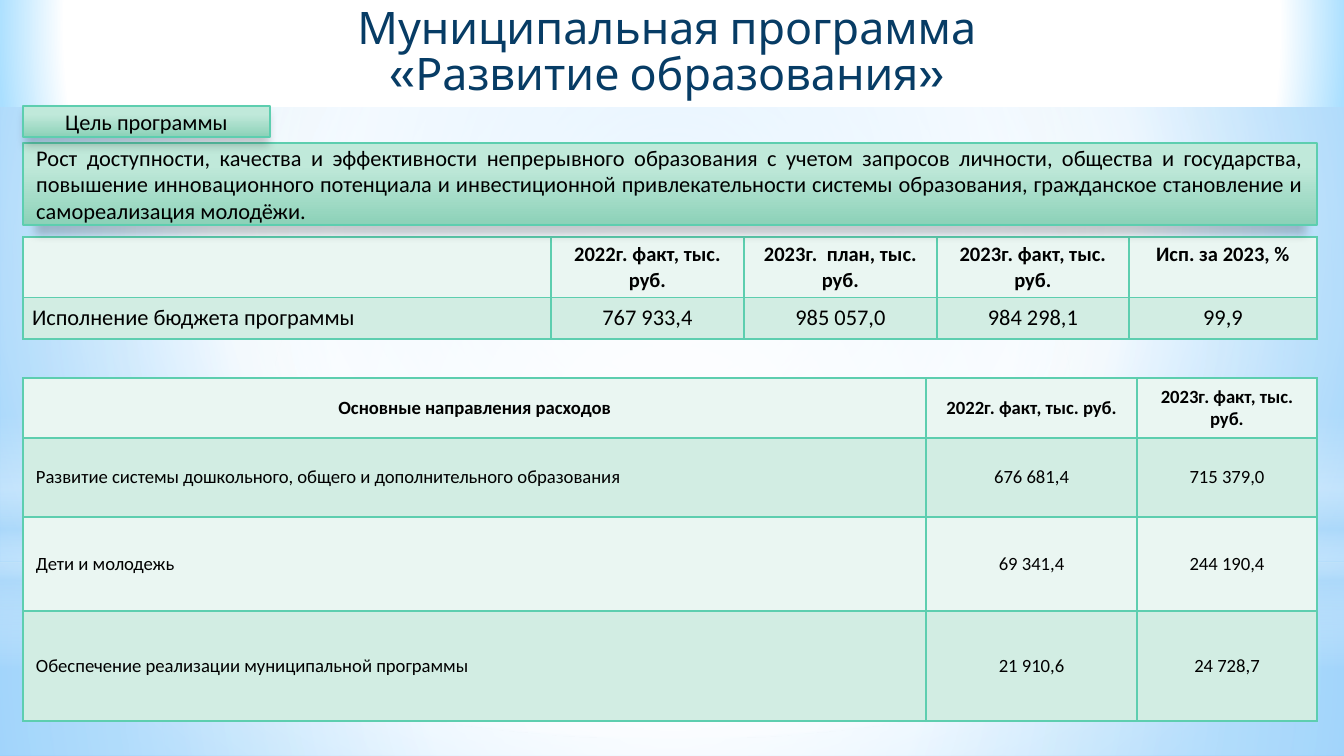
from pptx import Presentation
from pptx.dml.color import RGBColor
from pptx.enum.shapes import MSO_SHAPE
from pptx.enum.text import MSO_ANCHOR, MSO_AUTO_SIZE, PP_ALIGN
from pptx.oxml import parse_xml
from pptx.oxml.ns import qn
from pptx.util import Pt

RECT, OVAL = MSO_SHAPE.RECTANGLE, MSO_SHAPE.OVAL
MID, TOP = MSO_ANCHOR.MIDDLE, MSO_ANCHOR.TOP
LEFT, MIDST, JUST = PP_ALIGN.LEFT, PP_ALIGN.CENTER, PP_ALIGN.JUSTIFY
PX = 914400 / 134.4
NS = 'xmlns:a="http://schemas.openxmlformats.org/drawingml/2006/main"'
HEX = {"white": "FFFFFF", "sky": "B4DCFA", "pale": "AADFFF", "blue": "9ED5FF",
       "deep": "5BB9FF", "navy": "073C65", "black": "000000", "edge": "5DCEAF",
       "mint": "C0E9DA", "green": "8CD1B8", "light": "EAF6F2", "dim": "D2EDE3"}

# Content
TITLE = "Муниципальная программа \v«Развитие образования» "
GOAL = "Цель программы"
AIM = ("Рост доступности, качества и эффективности непрерывного образования "
       "с учетом запросов личности, общества и государства, повышение "
       "инновационного потенциала и инвестиционной привлекательности системы "
       "образования, гражданское становление и самореализация молодёжи.")
BUDGET = [
    ("", "2022г. факт, тыс. руб.", "2023г.  план, тыс. руб.",
     "2023г. факт, тыс. руб.", "Исп. за 2023, %"),
    ("Исполнение бюджета программы", "767 933,4", "985 057,0", "984 298,1", "99,9"),
]
COSTS = [
    ("Основные направления расходов", "2022г. факт, тыс. руб.", "2023г. факт, тыс. руб."),
    ("Развитие системы дошкольного, общего и дополнительного образования",
     "676 681,4", "715 379,0"),
    ("Дети и молодежь", "69 341,4", "244 190,4"),
    ("Обеспечение реализации муниципальной программы", "21 910,6", "24 728,7"),
]

# Gradients: stops as (position, colour, opacity), then centre (l, t, r, b) or angle
MID_RECT, HIGH_RECT = (50, 50, 50, 50), (20, 10, 20, 60)
BACK = [(0, "blue", 75), (60, "white", 100), (100, "deep", 100)]
HEAD = [(90, "white", 100), (100, "pale", 100)]
PANEL = [(28, "mint", 100), (100, "green", 100)]
BANDS = [
    (RECT, (0, 563, 1344, 193), MID_RECT,
     [(0, "white", 91), (37, "white", 76), (100, "sky", 79)]),
    (RECT, (0, 0, 1344, 563), MID_RECT,
     [(0, "white", 89), (48, "white", 62), (100, "sky", 79)]),
    (RECT, (0, 415, 1344, 253), 90,
     [(0, "white", 0), (29, "white", 30), (45, "sky", 40),
      (55, "white", 26), (65, "sky", 60), (100, "white", 0)]),
    (OVAL, (0, 176, 1344, 563), MID_RECT, [(0, "white", 100), (56, "white", 0)]),
]


def px(n):
    return round(n * PX)


def rgb(name):
    return RGBColor.from_string(HEX[name])


def paint(fill, props, stops, aim):
    """Swap an empty fill for a gradient."""
    fill.background()
    marks = "".join(
        f'<a:gs pos="{p * 1000}"><a:srgbClr val="{HEX[c]}">'
        f'<a:alpha val="{o * 1000}"/></a:srgbClr></a:gs>' for p, c, o in stops)
    if isinstance(aim, tuple):
        sides = " ".join(f'{k}="{v * 1000}"' for k, v in zip("ltrb", aim))
        way = f'<a:path path="circle"><a:fillToRect {sides}/></a:path>'
    else:
        way = f'<a:lin ang="{aim * 60000}" scaled="0"/>'
    grad = parse_xml(f'<a:gradFill {NS} rotWithShape="1"><a:gsLst>{marks}</a:gsLst>{way}</a:gradFill>')
    props.replace(props.find(qn("a:noFill")), grad)


def style(par, size, align, color="black", face="Calibri", bold=False):
    par.alignment = align
    font = par.font
    font.size, font.name, font.bold = Pt(size), face, bold
    font.color.rgb = rgb(color)


def add_block(kind, box, stops, aim):
    shape = slide.shapes.add_shape(kind, *map(px, box))
    shape.shadow.inherit = False
    shape.line.fill.background()
    paint(shape.fill, shape._element.spPr, stops, aim)
    return shape


def add_panel(box, text, align):
    shape = add_block(RECT, box, PANEL, 90)
    shape.line.color.rgb = rgb("edge")
    shape.line.width = Pt(0.75)
    glow = shape._element.spPr.find(qn("a:effectLst"))
    glow.append(parse_xml(
        f'<a:outerShdw {NS} blurRad="{Pt(5)}" dist="{Pt(4)}" dir="5400000" sx="98000" '
        f'algn="ctr" rotWithShape="0"><a:srgbClr val="{HEX["black"]}">'
        '<a:alpha val="20000"/></a:srgbClr></a:outerShdw>'))
    frame = shape.text_frame
    frame.word_wrap, frame.vertical_anchor = True, MID
    frame.text = text
    style(frame.paragraphs[0], 12, align)


def add_grid(top, data, cols, rows, sizes, first, anchor, tight):
    """Head row is bold; row fills alternate; tight(r, c) picks small margins."""
    grid = slide.shapes.add_table(len(rows), len(cols), px(23), px(top),
                                  px(sum(cols)), px(sum(rows))).table
    for c, wide in enumerate(cols):
        grid.columns[c].width = px(wide)
    for r, tall in enumerate(rows):
        grid.rows[r].height = px(tall)
        for c, text in enumerate(data[r]):
            cell = grid.cell(r, c)
            cell.text = text
            cell.fill.solid()
            cell.fill.fore_color.rgb = rgb("dim" if r % 2 else "light")
            cell.vertical_anchor = MID if r else anchor
            side, edge = (9, 5) if tight(r, c) else (13, 7)
            cell.margin_left = cell.margin_right = px(side)
            cell.margin_top = cell.margin_bottom = px(edge)
            style(cell.text_frame.paragraphs[0], sizes[min(r, 1)],
                  first if r and c == 0 else MIDST, bold=r == 0)
            props = cell._tc.get_or_add_tcPr()
            for i, tag in enumerate(("lnL", "lnR", "lnT", "lnB")):
                props.insert(i, parse_xml(
                    f'<a:{tag} {NS} w="{Pt(1)}"><a:solidFill><a:srgbClr '
                    f'val="{HEX["edge"]}"/></a:solidFill></a:{tag}>'))


deck = Presentation()
deck.slide_width, deck.slide_height = px(1344), px(756)
slide = deck.slides.add_slide(deck.slide_layouts[5])

# Backdrop
paint(slide.background.fill, slide.background._cSld.bg.bgPr, BACK, HIGH_RECT)
for kind, box, aim, stops in BANDS:
    add_block(kind, box, stops, aim)

# Title, raised above the backdrop
title = slide.shapes.title
slide.shapes._spTree.append(title._element)
title.left, title.top, title.width, title.height = map(px, (-1, -1, 1346, 108))
paint(title.fill, title._element.spPr, HEAD, HIGH_RECT)
frame = title.text_frame
frame.text = TITLE
frame.word_wrap, frame.auto_size = True, MSO_AUTO_SIZE.NONE
frame.vertical_anchor = MID
style(frame.paragraphs[0], 24, MIDST, "navy", "Cabin")
frame.paragraphs[0].line_spacing = Pt(25)

# Tables
add_grid(237, BUDGET, (528, 193, 193, 192, 188), (59, 40), (11, 12), LEFT, TOP,
         lambda r, c: r == 0 or c == 0)
add_grid(378, COSTS, (903, 211, 180), (60, 79, 94, 110), (10, 10), JUST, MID,
         lambda r, c: r == 0)

# Goal panels
add_panel((23, 143, 1294, 82), AIM, JUST)
add_panel((23, 106, 247, 31), GOAL, MIDST)

deck.save("out.pptx")
